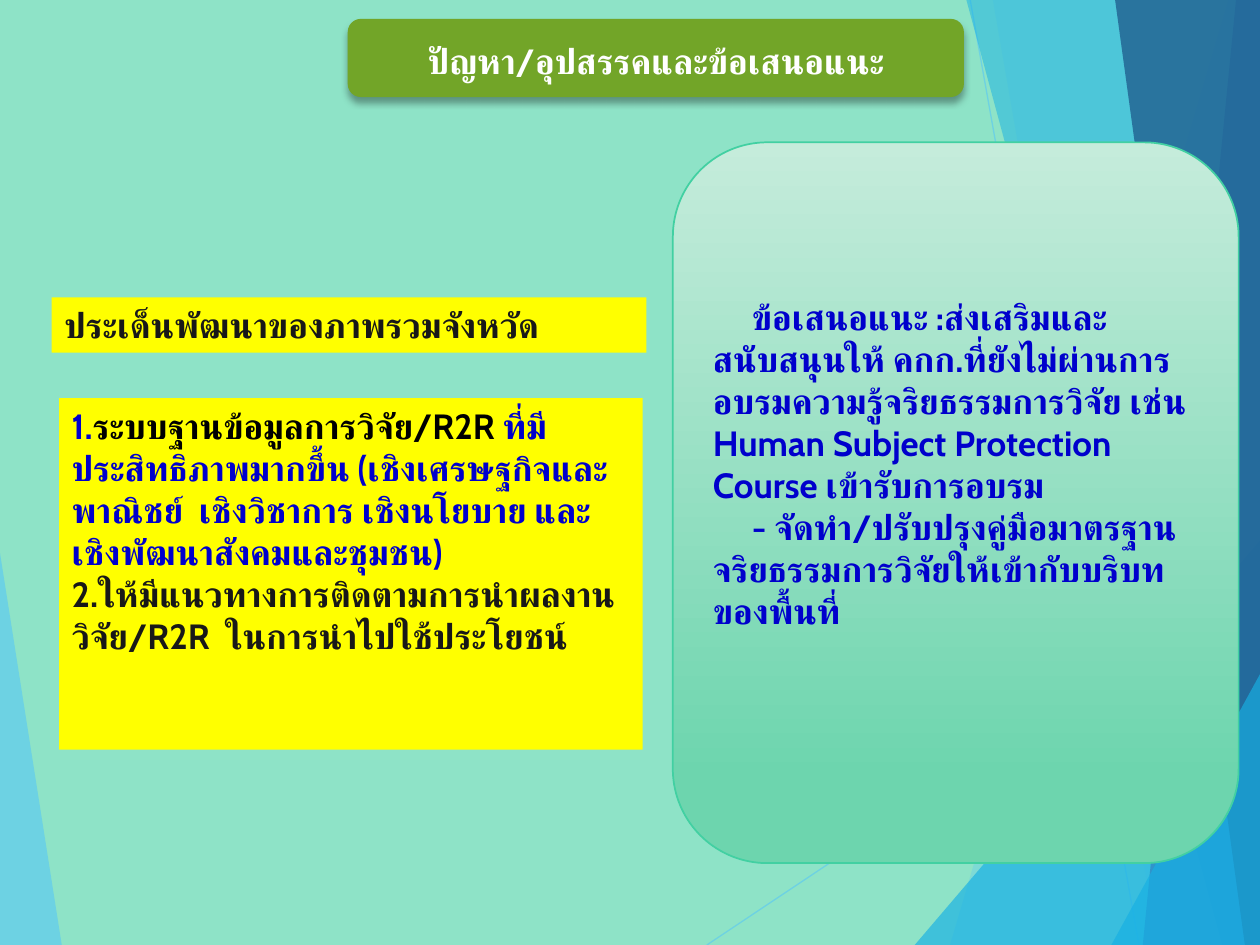
import pptx
import pptx.util
import pptx.oxml.ns
import pptx.dml.color
import pptx.enum.shapes
import pptx.enum.text
from lxml import etree
from pptx.util import Inches, Pt

FONT = "Cabin"
COLORS = {
    "mint": "8EE3C7", "sky": "5FCBEF", "azure": "17B0E4", "steel": "2E83C3",
    "navy": "226292", "green": "72A528", "pale": "C5ECDB", "sea": "6DD5AE",
    "edge": "42D0A2", "yellow": "FFFF00", "white": "FFFFFF", "blue": "0000CC",
    "black": "000000", "ink": "181818",
}
# Corner points, colour, opacity in percent
FACETS = [
    ([(0, 4.39), (0.49, 7.5), (0, 7.5)], "sky", 70),
    ([(9.75, 0), (7.54, 7.5), (10, 7.5), (10, 0)], "sky", 36),
    ([(7.88, 0), (9.19, 7.5), (10, 7.5), (10, 0)], "sky", 20),
    ([(7.26, 7.5), (10, 4.29), (10, 7.5)], "azure", 66),
    ([(7.67, 0), (9.7, 7.5), (10, 7.5), (10, 0)], "azure", 50),
    ([(9.81, 0), (9.07, 7.5), (10, 7.5), (10, 0)], "steel", 70),
    ([(8.85, 0), (9.88, 7.5), (10, 7.5), (10, 0)], "navy", 82),
    ([(8.82, 7.5), (10, 5.35), (10, 7.5)], "azure", 66),
]
RAYS = [(5.61, 7.5, 10, 4.57), (7.7, 0, 9.04, 7.5)]

TITLE = [[("ปัญหา/อุปสรรคและข้อเสนอแนะ", "white")]]
HEAD = [[("ประเด็นพัฒนาของภาพรวมจังหวัด", "ink")]]
ISSUES = [
    [("1.", "blue"), ("ระบบฐานข้อมูลการวิจัย/R2R ", "black"),
     ("ที่มีประสิทธิภาพมากขึ้น (เชิงเศรษฐกิจและพาณิชย์  เชิงวิชาการ เชิงนโยบาย "
      "และเชิงพัฒนาสังคมและชุมชน)", "blue")],
    [("2.ให้มีแนวทางการติดตามการนำผลงานวิจัย/R2R  ในการนำไปใช้ประโยชน์", "ink")],
]
ADVICE = [
    [("ข้อเสนอแนะ :ส่งเสริมและสนับสนุนให้ คกก.ที่ยังไม่ผ่านการอบรมความรู้จริยธรรมการวิจัย "
      "เช่น Human Subject Protection Course เข้ารับการอบรม", "blue")],
    [("- จัดทำ/ปรับปรุงคู่มือมาตรฐานจริยธรรมการวิจัยให้เข้ากับบริบทของพื้นที่", "blue")],
]


def rgb(name):
    return pptx.dml.color.RGBColor.from_string(COLORS[name])


def add(parent, tag, **attrs):
    return etree.SubElement(parent, pptx.oxml.ns.qn(tag), **attrs)


def fade(shape, pct):
    """Set the opacity of the shape's one solid colour."""
    tone = next(shape._element.spPr.iter(pptx.oxml.ns.qn("a:srgbClr")))
    add(tone, "a:alpha", val=str(pct * 1000))


def paint(shape, color):
    shape.shadow.inherit = False
    shape.fill.solid()
    shape.fill.fore_color.rgb = rgb(color)
    shape.line.fill.background()


def facet(slide, points, color, pct):
    spots = [(Inches(x), Inches(y)) for x, y in points]
    build = slide.shapes.build_freeform(*spots[0])
    build.add_line_segments(spots[1:], close=True)
    shape = build.convert_to_shape()
    paint(shape, color)
    fade(shape, pct)


def ray(slide, ends):
    line = slide.shapes.add_connector(
        pptx.enum.shapes.MSO_CONNECTOR.STRAIGHT, *map(Inches, ends))
    line.line.color.rgb = rgb("sky")
    line.line.width = Pt(0.75)
    fade(line, 70)
    add(line._element.spPr, "a:effectLst")


def write(shape, paras, anchor="TOP", align="LEFT", indent=0):
    frame = shape.text_frame
    frame.word_wrap = True
    frame.vertical_anchor = getattr(pptx.enum.text.MSO_ANCHOR, anchor)
    for i, parts in enumerate(paras):
        para = frame.add_paragraph() if i else frame.paragraphs[0]
        para.alignment = getattr(pptx.enum.text.PP_ALIGN, align)
        if indent:
            para._p.get_or_add_pPr().set("indent", str(Inches(indent)))
        for text, color in parts:
            run = para.add_run()
            run.text = text
            font = run.font
            font.name, font.size, font.bold = FONT, Pt(20), True
            font.color.rgb = rgb(color)
            add(font._element, "a:cs", typeface=FONT)


def box(slide, area, color, kind="RECTANGLE"):
    shape = slide.shapes.add_shape(
        getattr(pptx.enum.shapes.MSO_SHAPE, kind), *map(Inches, area))
    paint(shape, color)
    return shape


def title(slide):
    shape = box(slide, (2.76, 0.15, 4.89, 0.62), "green", "ROUNDED_RECTANGLE")
    effects = shape._element.spPr.find(pptx.oxml.ns.qn("a:effectLst"))
    cast = add(effects, "a:outerShdw", blurRad=str(Pt(4)), dist=str(Pt(3)),
               dir="5400000", rotWithShape="0")
    add(add(cast, "a:srgbClr", val=COLORS["black"]), "a:alpha", val="35000")
    write(shape, TITLE, "MIDDLE", "CENTER")
    shape.text_frame.paragraphs[0].line_spacing = 1.1


def panel(slide):
    shape = box(slide, (5.34, 1.13, 4.49, 5.72), "pale", "ROUNDED_RECTANGLE")
    shape.fill.gradient()
    shape.fill.gradient_angle = 270
    for stop, (spot, color) in zip(shape.fill.gradient_stops,
                                   [(0, "pale"), (0.88, "sea")]):
        stop.position = spot
        stop.color.rgb = rgb(color)
    shape.line.color.rgb = rgb("edge")
    shape.line.width = Pt(1)
    write(shape, ADVICE, "MIDDLE", indent=0.31)
    shape.text_frame.margin_bottom = Inches(0.67)


def main():
    deck = pptx.Presentation()
    deck.slide_width, deck.slide_height = Inches(10), Inches(7.5)
    slide = deck.slides.add_slide(deck.slide_layouts[6])
    slide.background.fill.solid()
    slide.background.fill.fore_color.rgb = rgb("mint")
    facet(slide, *FACETS[0])
    for ends in RAYS:
        ray(slide, ends)
    for item in FACETS[1:]:
        facet(slide, *item)
    title(slide)
    panel(slide)
    write(box(slide, (0.41, 2.36, 4.72, 0.44), "yellow"), HEAD)
    write(box(slide, (0.47, 3.16, 4.63, 2.79), "yellow"), ISSUES)
    deck.save("out.pptx")


if __name__ == "__main__":
    main()
